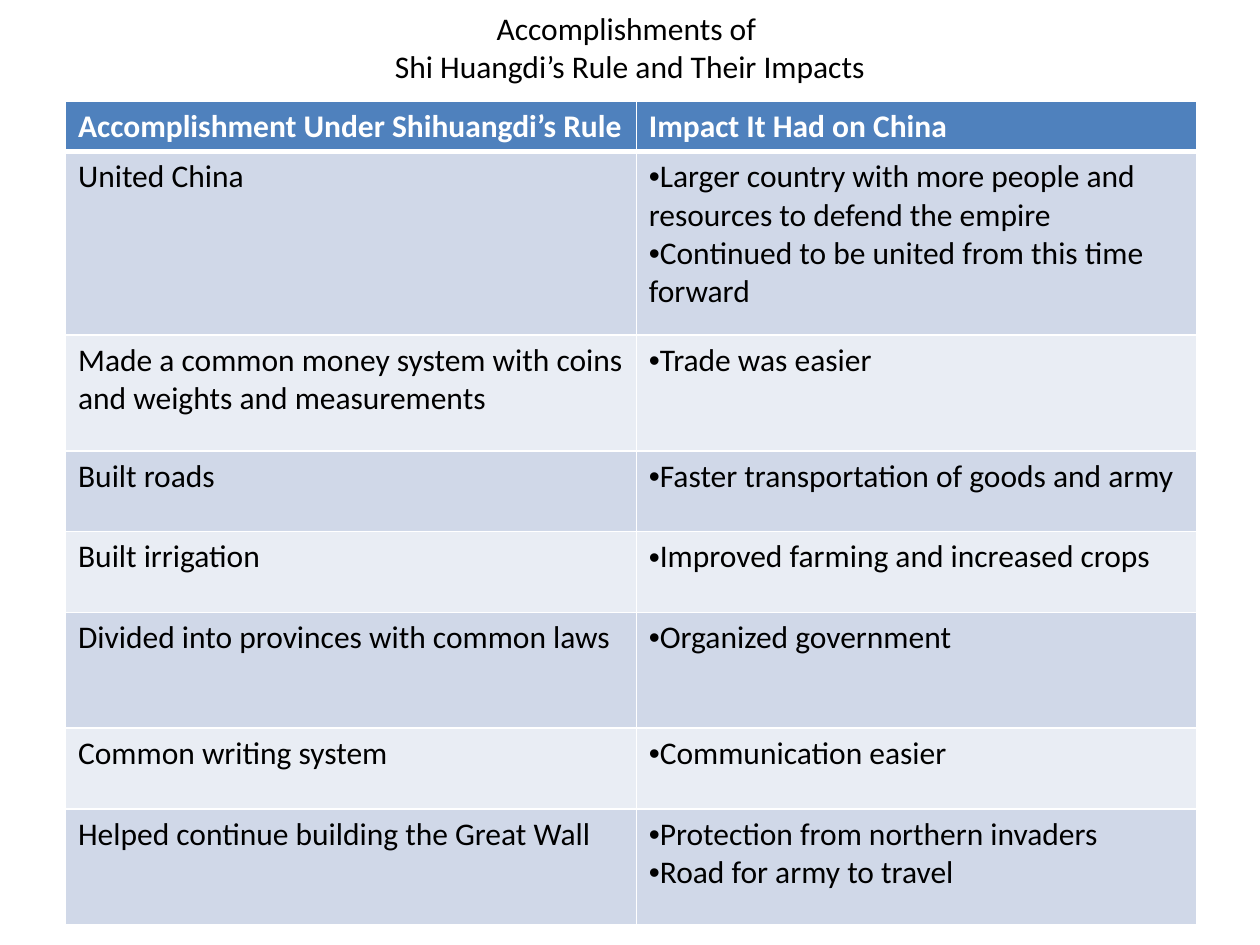
"""Build a slide with a table of Shi Huangdi's accomplishments and their impacts."""
from dataclasses import dataclass

from lxml.etree import SubElement
from pptx import Presentation
from pptx.dml.color import RGBColor
from pptx.enum.text import MSO_ANCHOR, PP_ALIGN
from pptx.oxml.ns import qn
from pptx.slide import Slide
from pptx.table import Table, _Cell
from pptx.text.text import TextFrame
from pptx.util import Inches, Pt


@dataclass(frozen=True)
class Theme:
    font: str = "Calibri"
    size: int = 18
    text: str = "000000"
    white: str = "FFFFFF"
    header: str = "4F81BD"
    bands: tuple[str, str] = ("D0D8E8", "E9EDF4")
    thin: int = 1
    thick: int = 3


@dataclass(frozen=True)
class Entry:
    accomplishment: str
    impacts: tuple[str, ...]
    height: float


THEME = Theme()
WIDTH, HEIGHT = Inches(10), Inches(7.5)
HEADINGS = ("Accomplishment Under Shihuangdi’s Rule", "Impact It Had on China")
HEADER_HEIGHT = 0.4
COLUMN_WIDTHS = (4.53, 4.45)
ENTRIES = (
    Entry("United China", (
        "Larger country with more people and resources to defend the empire",
        "Continued to be united from this time forward"), 1.46),
    Entry("Made a common money system with coins and weights and measurements",
          ("Trade was easier",), 0.92),
    Entry("Built roads", ("Faster transportation of goods and army",), 0.64),
    Entry("Built irrigation", ("Improved farming and increased crops",), 0.64),
    Entry("Divided into provinces with common laws", ("Organized government",), 0.92),
    Entry("Common writing system", ("Communication easier",), 0.64),
    Entry("Helped continue building the Great Wall",
          ("Protection from northern invaders", "Road for army to travel"), 0.92),
)


def write(tf: TextFrame, *lines: str, color: str = THEME.text, bold: bool = False,
          bullet: bool = False, align: PP_ALIGN = PP_ALIGN.LEFT) -> None:
    """Fill a text frame with one formatted paragraph per line."""
    tf.word_wrap = True
    for i, line in enumerate(lines):
        p = tf.paragraphs[0] if i == 0 else tf.add_paragraph()
        p.text = line
        p.alignment = align
        for r in p.runs:
            r.font.name = THEME.font
            r.font.size = Pt(THEME.size)
            r.font.bold = bold
            r.font.color.rgb = RGBColor.from_string(color)
        if bullet:
            pPr = p._p.get_or_add_pPr()
            pPr.set("marL", "0")
            pPr.set("indent", "0")
            SubElement(pPr, qn("a:buFont"), typeface="Arial")
            SubElement(pPr, qn("a:buChar"), char="•")


def style_cell(cell: _Cell, fill: str, top: int = THEME.thin,
               bottom: int = THEME.thin) -> None:
    """Give a cell white borders and a solid fill."""
    tcPr = cell._tc.get_or_add_tcPr()
    sides = {"lnL": THEME.thin, "lnR": THEME.thin, "lnT": top, "lnB": bottom}
    for side, width in sides.items():
        ln = SubElement(tcPr, qn(f"a:{side}"), w=str(Pt(width)))
        solid = SubElement(ln, qn("a:solidFill"))
        SubElement(solid, qn("a:srgbClr"), val=THEME.white)
    cell.fill.solid()
    cell.fill.fore_color.rgb = RGBColor.from_string(fill)


def add_title(s: Slide) -> None:
    """Add the centred two-line title."""
    sp = s.shapes.add_textbox(int(WIDTH * 0.05), 0, int(WIDTH * 0.9), int(HEIGHT * 0.1))
    sp.text_frame.vertical_anchor = MSO_ANCHOR.MIDDLE
    write(sp.text_frame, "Accomplishments of \vShi Huangdi’s Rule and Their Impacts",
          align=PP_ALIGN.CENTER)


def fill_header(table: Table) -> None:
    """Write the heading row."""
    for cell, heading in zip(table.rows[0].cells, HEADINGS):
        style_cell(cell, THEME.header, bottom=THEME.thick)
        write(cell.text_frame, heading, color=THEME.white, bold=True)


def fill_entry(table: Table, row: int, entry: Entry) -> None:
    """Write one accomplishment and its bulleted impacts."""
    left, right = table.rows[row].cells
    for cell in (left, right):
        style_cell(cell, THEME.bands[(row - 1) % 2],
                   top=THEME.thick if row == 1 else THEME.thin)
    write(left.text_frame, entry.accomplishment)
    write(right.text_frame, *entry.impacts, bullet=True)


def add_impact_table(s: Slide) -> None:
    """Add the table of accomplishments and impacts."""
    heights = (HEADER_HEIGHT, *(entry.height for entry in ENTRIES))
    table = s.shapes.add_table(
        len(heights), len(COLUMN_WIDTHS), Inches(0.52), Inches(0.8),
        Inches(sum(COLUMN_WIDTHS)), Inches(sum(heights))).table
    for column, width in zip(table.columns, COLUMN_WIDTHS):
        column.width = Inches(width)
    for row, height in zip(table.rows, heights):
        row.height = Inches(height)
    fill_header(table)
    for i, entry in enumerate(ENTRIES, start=1):
        fill_entry(table, i, entry)


def main() -> None:
    """Create the slide and save it."""
    prs = Presentation()
    prs.slide_width, prs.slide_height = WIDTH, HEIGHT
    s = prs.slides.add_slide(prs.slide_layouts[6])
    add_title(s)
    add_impact_table(s)
    prs.save("out.pptx")


if __name__ == "__main__":
    main()
